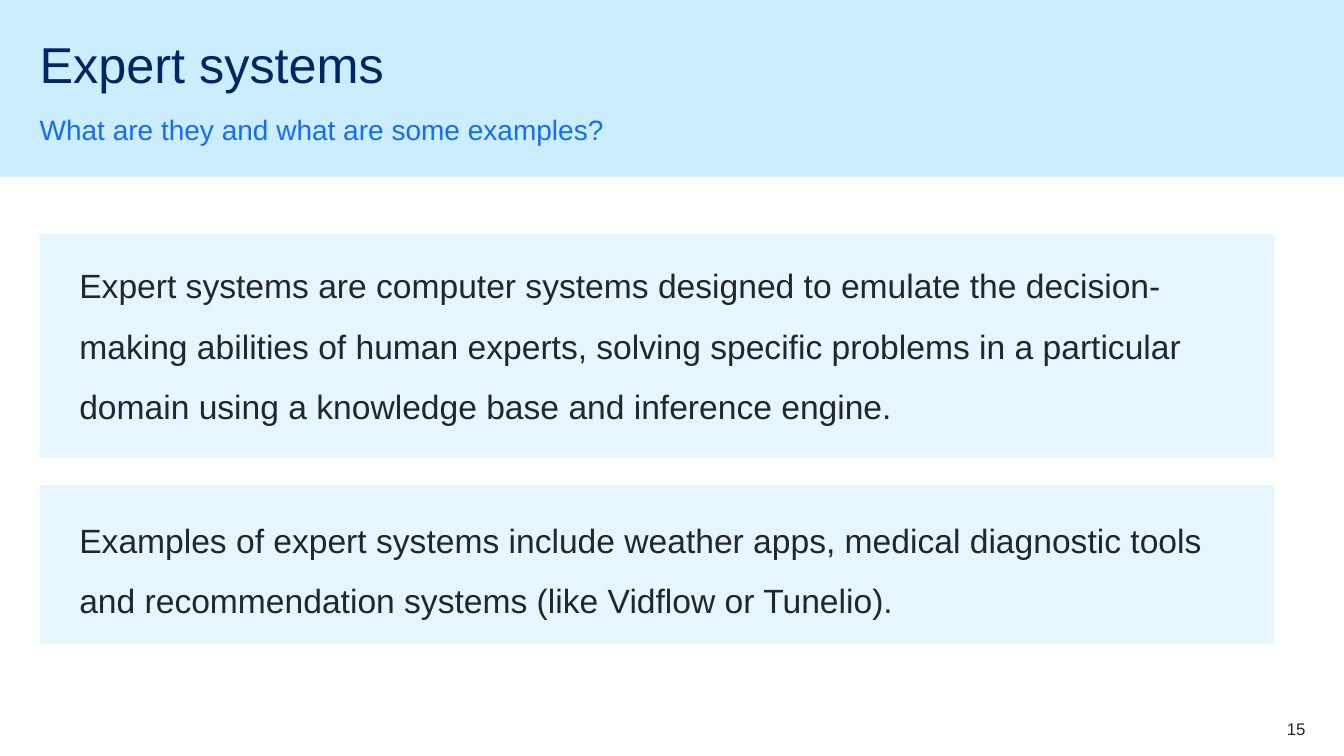
from lxml.etree import SubElement
from pptx import Presentation
from pptx.dml.color import RGBColor
from pptx.enum.shapes import MSO_SHAPE
from pptx.enum.text import MSO_ANCHOR, PP_ALIGN
from pptx.oxml.ns import qn
from pptx.util import Cm, Pt

SKY = RGBColor(0xCB, 0xED, 0xFD)
NAVY = RGBColor(0x00, 0x26, 0x64)
BLUE = RGBColor(0x14, 0x6C, 0xFD)
INK = RGBColor(0x22, 0x27, 0x2B)
LEFT = 1.0

deck = Presentation()
deck.slide_width = Cm(33.87)
deck.slide_height = Cm(19.05)
page = deck.slides.add_slide(deck.slide_layouts[6])


def add_panel(left, top, width, height, opacity=100):
    panel = page.shapes.add_shape(
        MSO_SHAPE.RECTANGLE, Cm(left), Cm(top), Cm(width), Cm(height))
    panel.shadow.inherit = False
    panel.line.fill.background()
    panel.fill.solid()
    panel.fill.fore_color.rgb = SKY
    if opacity < 100:
        color = panel._element.spPr.find(qn("a:solidFill"))[0]
        SubElement(color, qn("a:alpha"), val=str(opacity * 1000))


def add_text(*texts, left, top, width, height, size, color, spacing=1.0,
             before=0, after=(0,), inset=(0, 0), anchor=MSO_ANCHOR.TOP,
             align=PP_ALIGN.LEFT):
    box = page.shapes.add_textbox(Cm(left), Cm(top), Cm(width), Cm(height))
    frame = box.text_frame
    frame.word_wrap = True
    frame.vertical_anchor = anchor
    frame.margin_left = frame.margin_right = Cm(inset[0])
    frame.margin_top = frame.margin_bottom = Cm(inset[1])
    for index, text in enumerate(texts):
        para = frame.add_paragraph() if index else frame.paragraphs[0]
        para.alignment = align
        para.line_spacing = spacing
        para.space_before = Pt(before)
        para.space_after = Pt(after[index])
        span = para.add_run()
        span.text = text
        span.font.name = "Arial"
        span.font.size = Pt(size)
        span.font.color.rgb = color


add_panel(0, 0, 33.87, 4.45)
add_text("Expert systems", left=LEFT, top=1, width=28.5, height=1.45,
         size=36, color=NAVY, spacing=0.9)
add_text("What are they and what are some examples?",
         left=LEFT, top=2.82, width=28, height=0.86, size=20, color=BLUE,
         spacing=1.5, after=(12,), anchor=MSO_ANCHOR.BOTTOM)

for top, height in ((12.22, 4.01), (5.89, 5.64)):
    add_panel(LEFT, top, 31.12, height, opacity=46)

add_text(
    "Expert systems are computer systems designed to emulate the "
    "decision-making abilities of human experts, solving specific problems "
    "in a particular domain using a knowledge base and inference engine.",
    "Examples of expert systems include weather apps, medical diagnostic "
    "tools and recommendation systems (like Vidflow or Tunelio).",
    left=1.75, top=6.05, width=29.16, height=9.6, size=24, color=INK,
    spacing=1.5, before=12, after=(40, 20), inset=(0.25, 0.13))

add_text("15", left=30.9, top=18.1, width=2, height=0.5, size=12, color=INK,
         align=PP_ALIGN.RIGHT)

deck.save("out.pptx")
